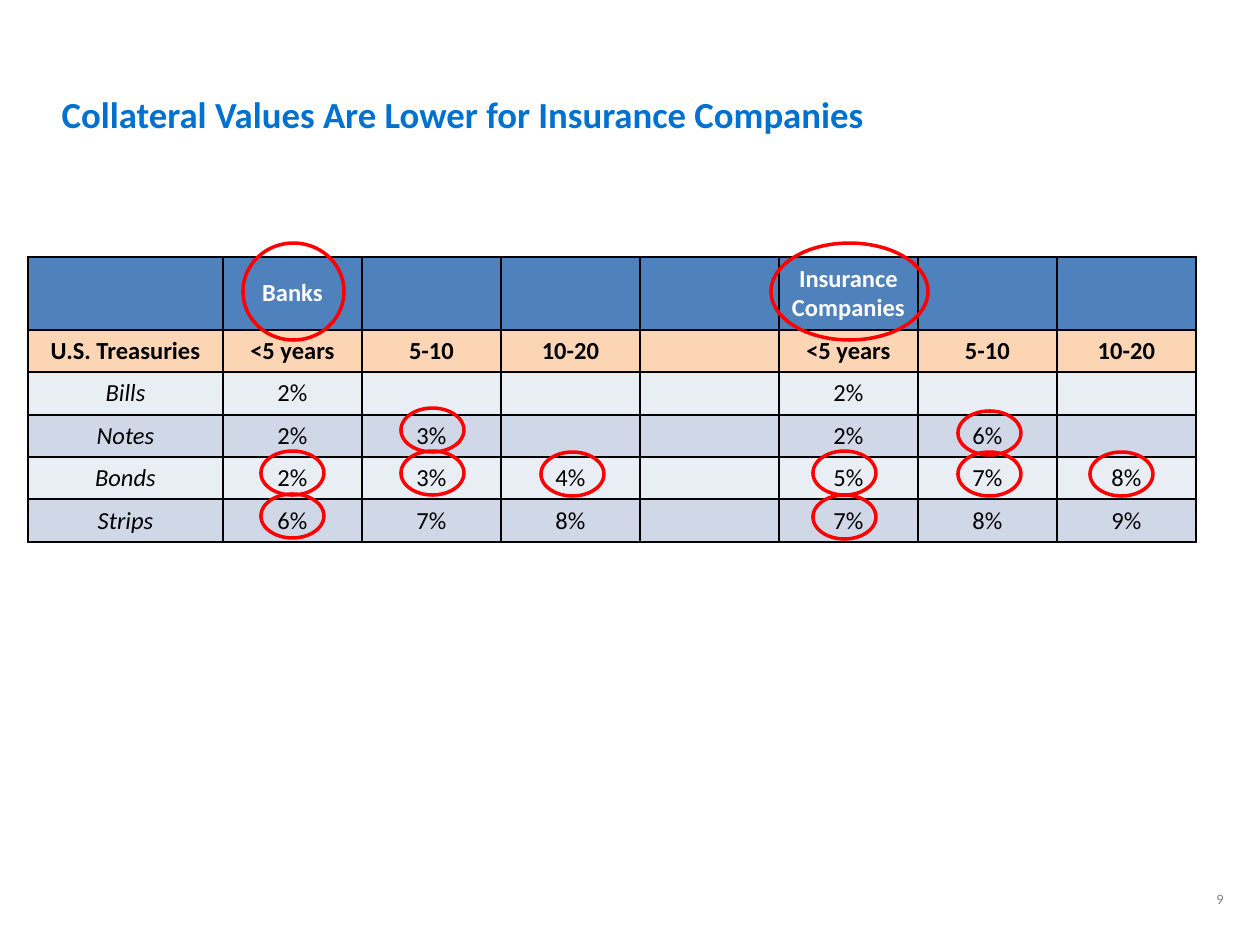
from lxml import etree
from pptx import Presentation
from pptx.dml.color import RGBColor
from pptx.enum.shapes import MSO_SHAPE
from pptx.enum.text import MSO_ANCHOR, PP_ALIGN
from pptx.oxml.ns import qn
from pptx.util import Emu, Pt

OVAL = MSO_SHAPE.OVAL
MIDDLE = MSO_ANCHOR.MIDDLE
LEFT, CENTER, RIGHT = PP_ALIGN.LEFT, PP_ALIGN.CENTER, PP_ALIGN.RIGHT

PX_PER_INCH = 126
FONT = "Calibri"
TABLE_SIZE = 14
COLORS = {
    "title": "0071CE",
    "number": "808080",
    "header": "4F81BD",
    "subheader": "FCD5B5",
    "light": "E9EDF4",
    "dark": "D0D8E8",
    "white": "FFFFFF",
    "black": "000000",
    "ring": "FF0000",
}

ROWS = [
    ["", "Banks", "", "", "", "Insurance Companies", "", ""],
    ["U.S. Treasuries", "<5 years", "5-10", "10-20", "", "<5 years", "5-10", "10-20"],
    ["Bills", "2%", "", "", "", "2%", "", ""],
    ["Notes", "2%", "3%", "", "", "2%", "6%", ""],
    ["Bonds", "2%", "3%", "4%", "", "5%", "7%", "8%"],
    ["Strips", "6%", "7%", "8%", "", "7%", "8%", "9%"],
]
ROW_FILLS = ["header", "subheader", "light", "dark", "light", "dark"]
ROW_HEIGHTS = [73, 42, 43, 42, 42, 43]
COLUMN_WIDTHS = [195] + [139] * 7

HEADER_RINGS = [(243, 101), (771, 157)]
VALUE_RINGS = [
    (401, 408), (958, 411),
    (261, 451), (401, 451), (541, 452), (813, 451), (958, 452), (1090, 452),
    (261, 494), (813, 495),
]


def px(length):
    """Turn pixels into EMU."""
    return Emu(round(length * 914400 / PX_PER_INCH))


def color(name):
    """Look up a palette colour."""
    return RGBColor.from_string(COLORS[name])


def write(frame, text, size, color_name, align, bold=False, italic=False):
    """Write one formatted run into a text frame."""
    para = frame.paragraphs[0]
    para.alignment = align
    span = para.add_run()
    span.text = text
    span.font.name = FONT
    span.font.size = Pt(size)
    span.font.bold = bold
    span.font.italic = italic
    span.font.color.rgb = color(color_name)


def add_title(page, text):
    """Place and format the title placeholder."""
    title = page.shapes.title
    title.left, title.top, title.width, title.height = map(px, (49, 82, 1032, 63))
    frame = title.text_frame
    frame.word_wrap = True
    frame.vertical_anchor = MIDDLE
    write(frame, text, 21, "title", LEFT, bold=True)


def add_page_number(page, text):
    """Add the page number at the lower right."""
    box = page.shapes.add_textbox(px(942), px(874), px(294), px(50))
    frame = box.text_frame
    frame.word_wrap = True
    frame.vertical_anchor = MIDDLE
    write(frame, text, 8.2, "number", RIGHT)


def add_borders(cell):
    """Give a cell a thin black line on every side."""
    properties = cell._tc.get_or_add_tcPr()
    for side in ("a:lnL", "a:lnR", "a:lnT", "a:lnB"):
        line = etree.SubElement(properties, qn(side), w=str(Pt(1)))
        fill = etree.SubElement(line, qn("a:solidFill"))
        etree.SubElement(fill, qn("a:srgbClr"), val=COLORS["black"])


def fill_cell(cell, text, row, column):
    """Format a table cell by its row and column."""
    add_borders(cell)
    cell.fill.solid()
    cell.fill.fore_color.rgb = color(ROW_FILLS[row])
    cell.vertical_anchor = MIDDLE
    cell.margin_left = cell.margin_right = px(6)
    if text:
        write(cell.text_frame, text, TABLE_SIZE, "white" if row == 0 else "black",
              CENTER, bold=row < 2, italic=row >= 2 and column == 0)
    else:
        para = cell.text_frame.paragraphs[0]
        etree.SubElement(para._p, qn("a:endParaRPr"), sz=str(TABLE_SIZE * 100))


def add_values_table(page):
    """Add the table of collateral values."""
    frame = page.shapes.add_table(len(ROWS), len(COLUMN_WIDTHS), px(28), px(257),
                                  px(sum(COLUMN_WIDTHS)), px(sum(ROW_HEIGHTS)))
    table = frame.table
    table.first_row = table.horz_banding = False
    for column, width in zip(table.columns, COLUMN_WIDTHS):
        column.width = px(width)
    for row, (texts, height) in enumerate(zip(ROWS, ROW_HEIGHTS)):
        table.rows[row].height = px(height)
        for column, text in enumerate(texts):
            fill_cell(table.cell(row, column), text, row, column)


def add_ring(page, left, top, width, height):
    """Add a red ring around a table entry."""
    ring = page.shapes.add_shape(OVAL, px(left), px(top), px(width), px(height))
    ring.shadow.inherit = False
    ring.fill.background()
    ring.line.color.rgb = color("ring")
    ring.line.width = Pt(2)


def main():
    """Build and save the deck."""
    deck = Presentation()
    deck.slide_width, deck.slide_height = px(1260), px(945)
    page = deck.slides.add_slide(deck.slide_layouts[5])
    add_title(page, "Collateral Values Are Lower for Insurance Companies")
    add_page_number(page, "9")
    add_values_table(page)
    for left, top in VALUE_RINGS:
        add_ring(page, left, top, 63, 44)
    for left, width in HEADER_RINGS:
        add_ring(page, left, 243, width, 97)
    deck.save("out.pptx")


if __name__ == "__main__":
    main()
